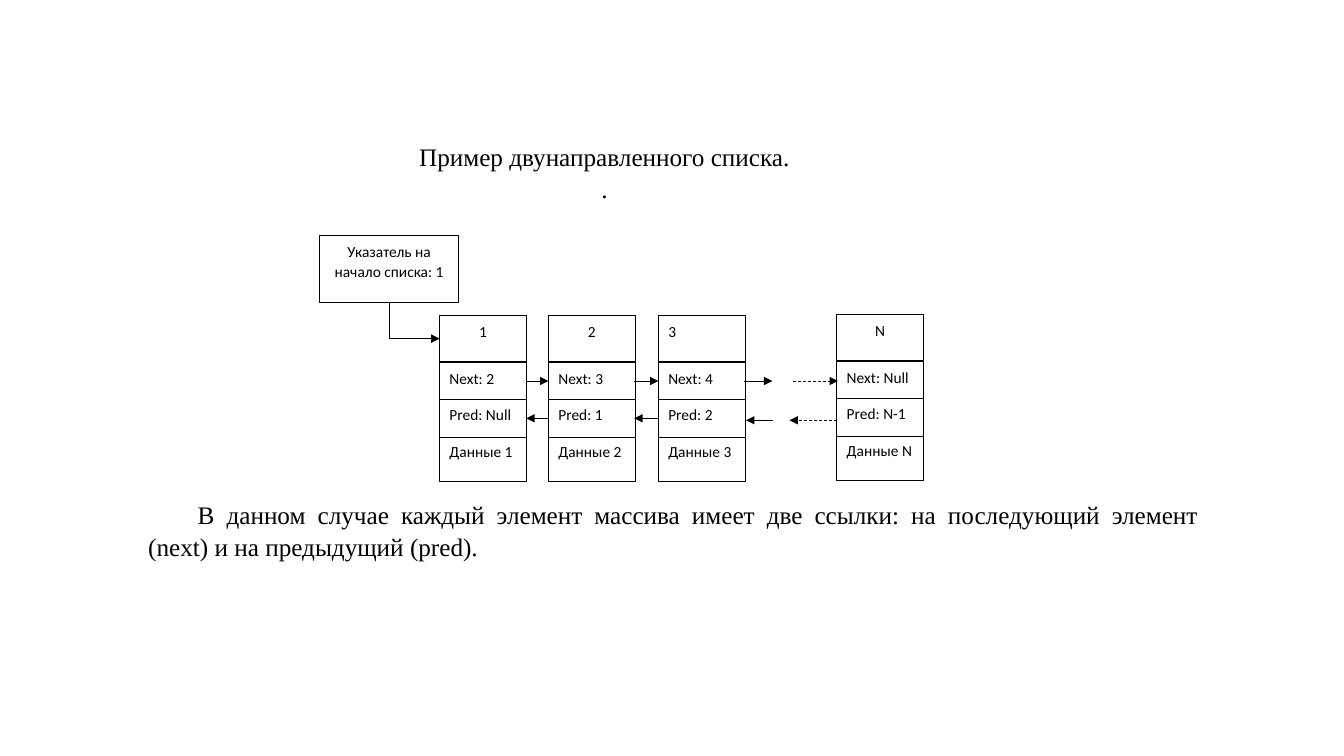
"""Build a slide that explains a doubly linked list."""
import pptx
import pptx.dml.color
import pptx.enum.dml
import pptx.enum.shapes
import pptx.enum.text
import pptx.oxml.ns
import pptx.util
from lxml import etree

Inches = pptx.util.Inches
Pt = pptx.util.Pt
ALIGN = pptx.enum.text.PP_ALIGN
KIND = pptx.enum.shapes.MSO_CONNECTOR

HEADING = ["Пример двунаправленного списка.", "."]
EXPLANATION = ["В данном случае каждый элемент массива имеет две ссылки: "
               "на последующий элемент (next) и на предыдущий (pred)."]
POINTER = "Указатель на начало списка: 1"
INK, PAPER = "000000", "FFFFFF"

NODES = [
    (4.36, 3.13, ALIGN.CENTER, ("1", "Next: 2", "Pred: Null", "Данные 1")),
    (5.44, 3.13, ALIGN.CENTER, ("2", "Next: 3", "Pred: 1", "Данные 2")),
    (6.53, 3.13, ALIGN.LEFT, ("3", "Next: 4", "Pred: 2", "Данные 3")),
    (8.3, 3.12, ALIGN.CENTER, ("N", "Next: Null", "Pred: N-1", "Данные N")),
]
NODE_WIDTH = 0.86
FIELDS = [(0, 0.46), (0.47, 0.36), (0.83, 0.38), (1.19, 0.46)]
DRAW_ORDER = (3, 1, 0, 2)

NEXT_Y, PRED_Y, TAIL_PRED_Y = 3.78, 4.15, 4.17
LINKS = [
    (5.22, 5.44, NEXT_Y, False),
    (6.29, 6.53, NEXT_Y, False),
    (7.38, 7.66, NEXT_Y, False),
    (7.87, 8.31, NEXT_Y, True),
    (8.3, 7.83, TAIL_PRED_Y, True),
    (7.67, 7.4, TAIL_PRED_Y, False),
    (6.53, 6.29, PRED_Y, False),
    (5.44, 5.22, PRED_Y, False),
]


def color(value):
    return pptx.dml.color.RGBColor.from_string(value)


def write(holder, lines, size=11, font="Calibri", align=ALIGN.LEFT, after=8, indent=0):
    frame = holder.text_frame
    frame.word_wrap = True
    frame.auto_size = pptx.enum.text.MSO_AUTO_SIZE.NONE
    frame.vertical_anchor = pptx.enum.text.MSO_ANCHOR.TOP
    for index, line in enumerate(lines):
        paragraph = frame.add_paragraph() if index else frame.paragraphs[0]
        paragraph.alignment = align
        paragraph.line_spacing = 1.07
        paragraph.space_before = Pt(0)
        paragraph.space_after = Pt(after)
        properties = paragraph._p.get_or_add_pPr()
        properties.set("marL", "0")
        properties.set("indent", str(Inches(indent)))
        etree.SubElement(properties, pptx.oxml.ns.qn("a:buNone"))
        run = paragraph.add_run()
        run.text = line
        run.font.size = Pt(size)
        run.font.name = font
        run.font.color.rgb = color(INK)


def place(holder, left, top, width, height):
    holder.left, holder.top = Inches(left), Inches(top)
    holder.width, holder.height = Inches(width), Inches(height)


def add_box(slide, left, top, width, height, text, align):
    box = slide.shapes.add_shape(pptx.enum.shapes.MSO_SHAPE.RECTANGLE, Inches(left),
                                 Inches(top), Inches(width), Inches(height))
    box.shadow.inherit = False
    box.fill.solid()
    box.fill.fore_color.rgb = color(PAPER)
    box.line.color.rgb = color(INK)
    box.line.width = Pt(0.5)
    write(box, [text], align=align)


def add_arrow(slide, start, end, kind=KIND.STRAIGHT, dashed=False):
    arrow = slide.shapes.add_connector(kind, *map(Inches, start + end))
    arrow.line.color.rgb = color(INK)
    arrow.line.width = Pt(0.5)
    if dashed:
        arrow.line.dash_style = pptx.enum.dml.MSO_LINE.DASH
    outline = arrow.line._get_or_add_ln()
    etree.SubElement(outline, pptx.oxml.ns.qn("a:tailEnd"), type="triangle")
    etree.SubElement(arrow._element.spPr, pptx.oxml.ns.qn("a:effectLst"))
    return arrow


def add_pointer_arrow(slide):
    arrow = add_arrow(slide, (4.29, 2.93), (3.93, 3.43), KIND.ELBOW)
    properties = arrow._element.spPr
    properties.find(pptx.oxml.ns.qn("a:prstGeom")).set("prst", "bentConnector2")
    properties.find(pptx.oxml.ns.qn("a:xfrm")).set("rot", str(270 * 60000))


def main():
    deck = pptx.Presentation()
    deck.slide_width, deck.slide_height = Inches(13.33), Inches(7.5)
    slide = deck.slides.add_slide(deck.slide_layouts[1])
    heading, explanation = slide.placeholders

    place(heading, 1.6, 1.33, 8.79, 0.73)
    write(heading, HEADING, size=18, font="Times New Roman", align=ALIGN.CENTER, after=0)
    place(explanation, 1.37, 4.88, 10.62, 0.73)
    write(explanation, EXPLANATION, size=18, font="Times New Roman",
          align=ALIGN.JUSTIFY, after=0, indent=0.49)

    add_box(slide, 3.17, 2.34, 1.38, 0.66, POINTER, ALIGN.CENTER)
    add_pointer_arrow(slide)
    for left, top, number_align, texts in NODES:
        for field in DRAW_ORDER:
            offset, height = FIELDS[field]
            align = ALIGN.LEFT if field else number_align
            add_box(slide, left, top + offset, NODE_WIDTH, height, texts[field], align)
    for start, end, y, dashed in LINKS:
        add_arrow(slide, (start, y), (end, y), dashed=dashed)

    deck.save("out.pptx")


if __name__ == "__main__":
    main()
